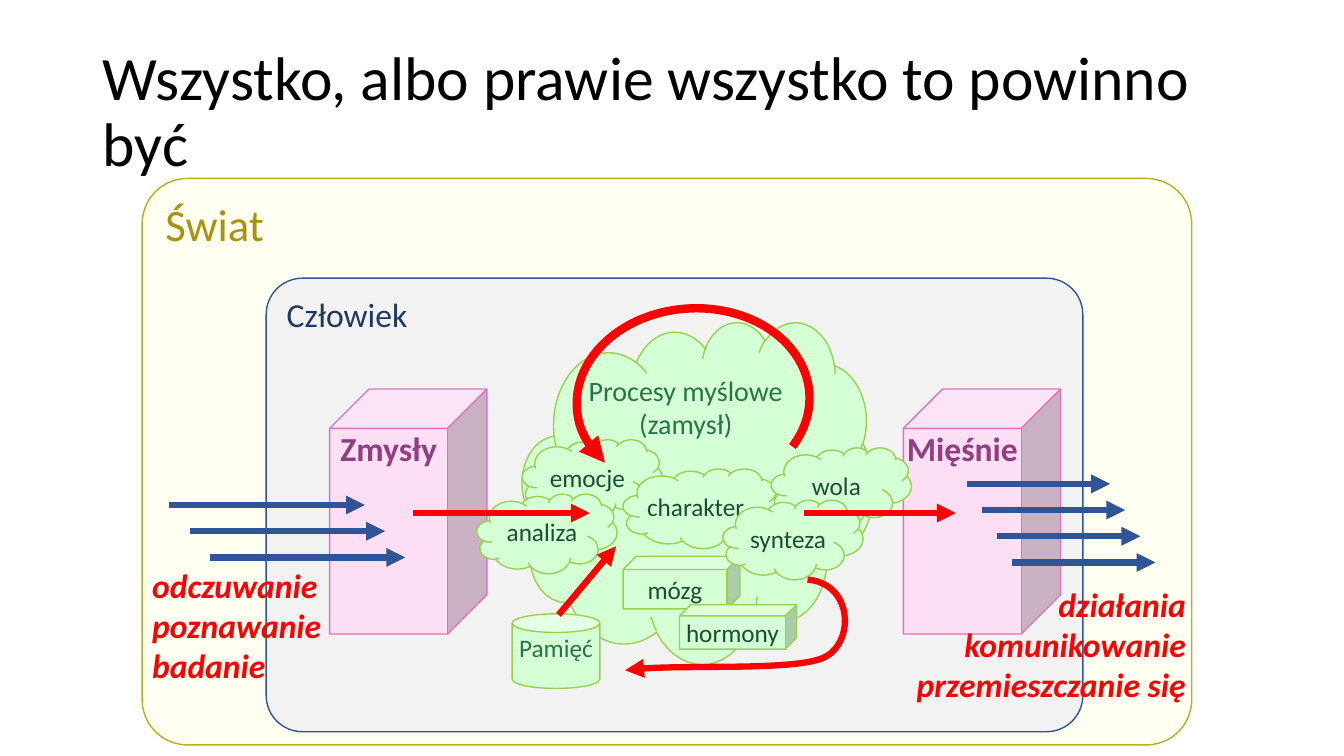
from collections import namedtuple

from lxml.etree import SubElement
from pptx import Presentation
from pptx.dml.color import RGBColor
from pptx.enum.shapes import MSO_CONNECTOR, MSO_SHAPE
from pptx.enum.text import MSO_ANCHOR, MSO_AUTO_SIZE, PP_ALIGN
from pptx.oxml.ns import qn
from pptx.util import Pt

PX = 9144
FONT = "Calibri"
COLORS = {
    "title": "000000",
    "world_fill": "FFFFF2", "world_line": "BBAD1D", "world_text": "A9920F",
    "human_fill": "F2F2F2", "human_line": "2F5597", "human_text": "203864",
    "body_fill": "FCDEF5", "body_line": "DD73BC", "body_text": "923E83",
    "mind_fill": "D5FFD4", "mind_line": "99D14D", "mind_text": "257549",
    "part_text": "194F31",
    "signal": "2F5597", "flow": "FF0000",
}
Box = namedtuple("Box", "left top width height")


def emu(*lengths):
    return [round(length * PX) for length in lengths]


def color(name):
    return RGBColor.from_string(COLORS[name])


def inside(box, left, top, width, height):
    return Box(box.left + left, box.top + top, width, height)


def write(frame, text, size, ink, align=PP_ALIGN.LEFT, anchor=MSO_ANCHOR.TOP,
          bold=False, italic=False):
    frame.text = text
    frame.word_wrap = True
    frame.vertical_anchor = anchor
    for paragraph in frame.paragraphs:
        paragraph.alignment = align
        for run in paragraph.runs:
            run.font.name = FONT
            run.font.size = Pt(size)
            run.font.bold = bold
            run.font.italic = italic
            run.font.color.rgb = color(ink)


def add_block(slide, kind, box, palette):
    shape = slide.shapes.add_shape(kind, *emu(*box))
    shape.shadow.inherit = False
    shape.fill.solid()
    shape.fill.fore_color.rgb = color(palette + "_fill")
    shape.line.color.rgb = color(palette + "_line")
    shape.line.width = Pt(1)
    return shape


def add_label_block(slide, kind, box, palette, text, size, ink,
                    anchor=MSO_ANCHOR.TOP, bold=False):
    shape = add_block(slide, kind, box, palette)
    frame = shape.text_frame
    frame.margin_left = frame.margin_right = 0
    frame.margin_top = frame.margin_bottom = 0
    write(frame, text, size, ink, PP_ALIGN.CENTER, anchor, bold)


def style_arrow(shape, ink, width):
    shape.line.color.rgb = color(ink)
    shape.line.width = Pt(width)
    outline = shape.element.spPr.find(qn("a:ln"))
    SubElement(outline, qn("a:tailEnd"), type="triangle")


def add_arrow(slide, start, end, ink):
    connector = slide.shapes.add_connector(
        MSO_CONNECTOR.STRAIGHT, *emu(*start, *end))
    style_arrow(connector, ink, 4.5)
    SubElement(connector.element.spPr, qn("a:effectLst"))


def add_frame(slide, box, palette, text, size):
    shape = add_block(slide, MSO_SHAPE.ROUNDED_RECTANGLE, box, palette)
    shape.adjustments[0] = 0.08
    write(shape.text_frame, text, size, palette + "_text")


def add_body_part(slide, box, text):
    add_label_block(slide, MSO_SHAPE.CUBE, box, "body", text, 24,
                    "body_text", bold=True)


def add_signals(slide, box, count, step_x):
    for index in range(count):
        left = box.left + index * step_x
        top = box.top + index * 26
        add_arrow(slide, (left, top), (left + box.width, top), "signal")


def add_mind(slide, box):
    add_label_block(slide, MSO_SHAPE.CLOUD, box, "mind",
                    "Procesy myślowe\n(zamysł)", 20, "mind_text")
    parts = [
        ("mózg", MSO_SHAPE.CUBE, 100, 233, 116, 52),
        ("emocje", MSO_SHAPE.CLOUD, 0, 117, 139, 79),
        ("analiza", MSO_SHAPE.CLOUD, -45, 171, 139, 79),
        ("charakter", MSO_SHAPE.CLOUD, 100, 146, 155, 79),
        ("wola", MSO_SHAPE.CLOUD, 247, 125, 139, 79),
        ("synteza", MSO_SHAPE.CLOUD, 199, 177, 139, 79),
        ("hormony", MSO_SHAPE.CUBE, 156, 281, 116, 44),
    ]
    for text, kind, *place in parts:
        add_label_block(slide, kind, inside(box, *place), "mind", text, 18,
                        "part_text", MSO_ANCHOR.MIDDLE)
    add_label_block(slide, MSO_SHAPE.CAN, inside(box, -10, 290, 87, 74),
                    "mind", "Pamięć", 18, "mind_text")


def curve_points(start, first, second, end, steps=24):
    for index in range(1, steps + 1):
        t = index / steps
        yield tuple(
            (1 - t) ** 3 * a + 3 * (1 - t) ** 2 * t * b
            + 3 * (1 - t) * t ** 2 * c + t ** 3 * d
            for a, b, c, d in zip(start, first, second, end))


def add_memory_curve(slide, box):
    start, bend, end = (181, 0), (198, 77), (0, 90)
    points = [*curve_points(start, (226, 4), (228, 62), bend),
              *curve_points(bend, (168, 92), (46, 83), end)]
    place = [emu(box.left + x, box.top + y) for x, y in [start, *points]]
    builder = slide.shapes.build_freeform(*place[0])
    builder.add_line_segments(place[1:], close=False)
    shape = builder.convert_to_shape()
    shape.shadow.inherit = False
    shape.fill.background()
    style_arrow(shape, "flow", 4.5)


def add_thought_loop(slide, box):
    shape = slide.shapes.add_shape(MSO_SHAPE.ARC, *emu(*box))
    shape.shadow.inherit = False
    shape.fill.background()
    shape.adjustments[0] = 91.06
    shape.adjustments[1] = 19.07
    shape.rotation = 176.6
    shape.element.spPr.find(qn("a:xfrm")).set("flipV", "1")
    style_arrow(shape, "flow", 6)


def add_flows(slide, box):
    left, top = box.left, box.top
    arrows = [((279, 190), (430, 190)), ((-108, 190), (67, 190))]
    for start, end in arrows:
        add_arrow(slide, (left + start[0], top + start[1]),
                  (left + end[0], top + end[1]), "flow")
    add_memory_curve(slide, inside(box, 102, 256, 217, 90))
    add_arrow(slide, (left + 36, top + 291), (left + 93, top + 223), "flow")
    add_thought_loop(slide, inside(box, 54, -13, 231, 183))


def add_title(slide, box, text):
    title = slide.shapes.title
    title.left, title.top, title.width, title.height = emu(*box)
    write(title.text_frame, text, 44, "title", anchor=MSO_ANCHOR.MIDDLE)
    title.text_frame.paragraphs[0].line_spacing = 0.9
    title.text_frame.auto_size = MSO_AUTO_SIZE.NONE
    slide.shapes.element.append(title.element)


def add_activities(slide, box, activities, align):
    frame = slide.shapes.add_textbox(*emu(*box)).text_frame
    write(frame, "\n".join(activities), 24, "flow", align,
          bold=True, italic=True)
    frame.auto_size = MSO_AUTO_SIZE.SHAPE_TO_FIT_TEXT


def build_world(slide, box):
    add_frame(slide, box, "world", "Świat", 32)
    add_frame(slide, inside(box, 123, 99, 810, 450), "human", "Człowiek", 24)
    add_body_part(slide, inside(box, 755, 209, 156, 243), "Mięśnie")
    add_body_part(slide, inside(box, 186, 209, 156, 243), "Zmysły")
    add_signals(slide, inside(box, 818, 303, 142, 78), 4, 15)
    add_signals(slide, inside(box, 27, 324, 194, 52), 3, 20)
    mind = inside(box, 377, 142, 349, 339)
    add_mind(slide, mind)
    add_flows(slide, mind)
    add_title(slide, Box(92, 40, 1150, 145),
              "Wszystko, albo prawie wszystko to powinno być")
    add_activities(slide, inside(box, 0, 378, 231, 131),
                   ["odczuwanie", "poznawanie", "badanie"], PP_ALIGN.LEFT)
    add_activities(slide, inside(box, 747, 397, 298, 131),
                   ["działania", "komunikowanie", "przemieszczanie się"],
                   PP_ALIGN.RIGHT)


def main():
    presentation = Presentation()
    presentation.slide_width, presentation.slide_height = emu(1333, 750)
    slide = presentation.slides.add_slide(presentation.slide_layouts[5])
    build_world(slide, Box(141, 177, 1041, 562))
    presentation.save("out.pptx")


if __name__ == "__main__":
    main()
